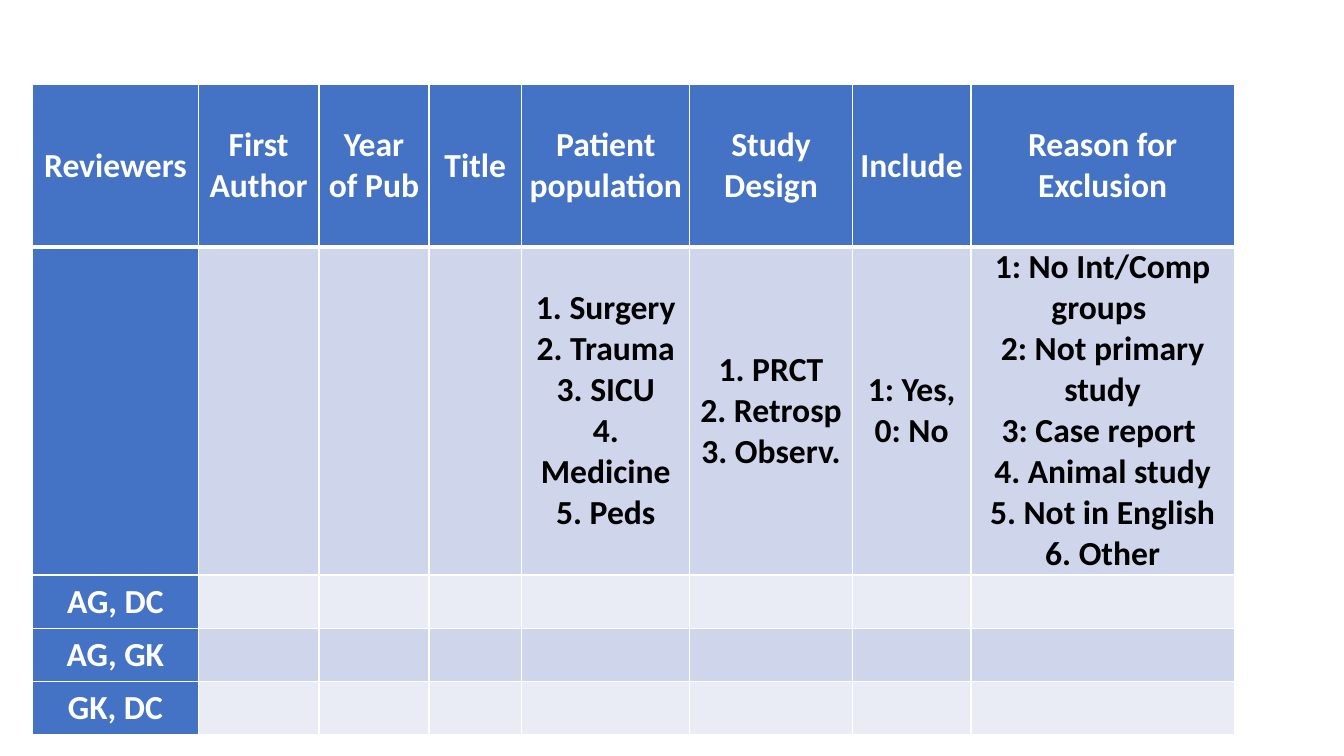
"""Build a slide with the screening form for a literature review."""
from lxml import etree
from pptx import Presentation
from pptx.dml.color import RGBColor
from pptx.enum.text import MSO_ANCHOR, PP_ALIGN
from pptx.oxml.ns import qn
from pptx.util import Pt

CENTER = PP_ALIGN.CENTER
MIDDLE = MSO_ANCHOR.MIDDLE
BLUE, WHITE, BLACK = "4472C4", "FFFFFF", "000000"
BANDS = ["E9EBF5", "CFD5EA"]


def color(hex_code):
    return RGBColor.from_string(hex_code)


def add_border(cell, side, width):
    line = etree.SubElement(cell._tc.get_or_add_tcPr(), qn(f"a:{side}"), w=str(Pt(width)))
    fill = etree.SubElement(line, qn("a:solidFill"))
    etree.SubElement(fill, qn("a:srgbClr"), val=WHITE)


column_widths = [118.1, 86.4, 78.5, 66.2, 120.2, 115.9, 85, 187.9]
row_heights = [115.9, 226.1, 38.2, 38.2, 37.4]
headings = ["Reviewers", "First Author", "Year of Pub", "Title",
            "Patient population", "Study Design", "Include", "Reason for Exclusion"]
answer_codes = [
    "", "", "", "",
    "1. Surgery\n2. Trauma\n3. SICU\n4. Medicine\n5. Peds",
    "1. PRCT\n2. Retrosp\n3. Observ.",
    "1: Yes, 0: No",
    "1: No Int/Comp groups \n2: Not primary study\n3: Case report \n"
    "4. Animal study\n5. Not in English\n6. Other",
]
reviewer_pairs = ["AG, DC", "AG, GK", "GK, DC"]
form_rows = [headings, answer_codes]
form_rows += [[pair] + [""] * (len(headings) - 1) for pair in reviewer_pairs]

cell_format = {"margin_left": Pt(5), "margin_right": Pt(5), "margin_top": 0,
               "margin_bottom": 0, "vertical_anchor": MIDDLE}
font_format = {"name": "Calibri", "size": Pt(24), "bold": True}

prs = Presentation()
prs.slide_width, prs.slide_height = Pt(960), Pt(540)
slide = prs.slides.add_slide(prs.slide_layouts[6])
form = slide.shapes.add_table(
    len(form_rows), len(headings), Pt(23.4), Pt(60.5),
    Pt(sum(column_widths)), Pt(sum(row_heights))).table
form.first_col = True

for column, width in zip(form.columns, column_widths):
    column.width = Pt(width)
for row, height in zip(form.rows, row_heights):
    row.height = Pt(height)

for r, entries in enumerate(form_rows):
    for c, entry in enumerate(entries):
        cell = form.cell(r, c)
        is_heading = r == 0 or c == 0
        for name, value in cell_format.items():
            setattr(cell, name, value)
        for side in ("lnL", "lnR", "lnT", "lnB"):
            at_heading_rule = (r, side) in ((0, "lnB"), (1, "lnT"))
            add_border(cell, side, 3 if at_heading_rule else 1)
        cell.fill.solid()
        cell.fill.fore_color.rgb = color(BLUE if is_heading else BANDS[r % 2])
        cell.text = entry
        for paragraph in cell.text_frame.paragraphs:
            paragraph.alignment = CENTER
            for run in paragraph.runs:
                for name, value in font_format.items():
                    setattr(run.font, name, value)
                run.font.color.rgb = color(WHITE if is_heading else BLACK)

prs.save("out.pptx")
